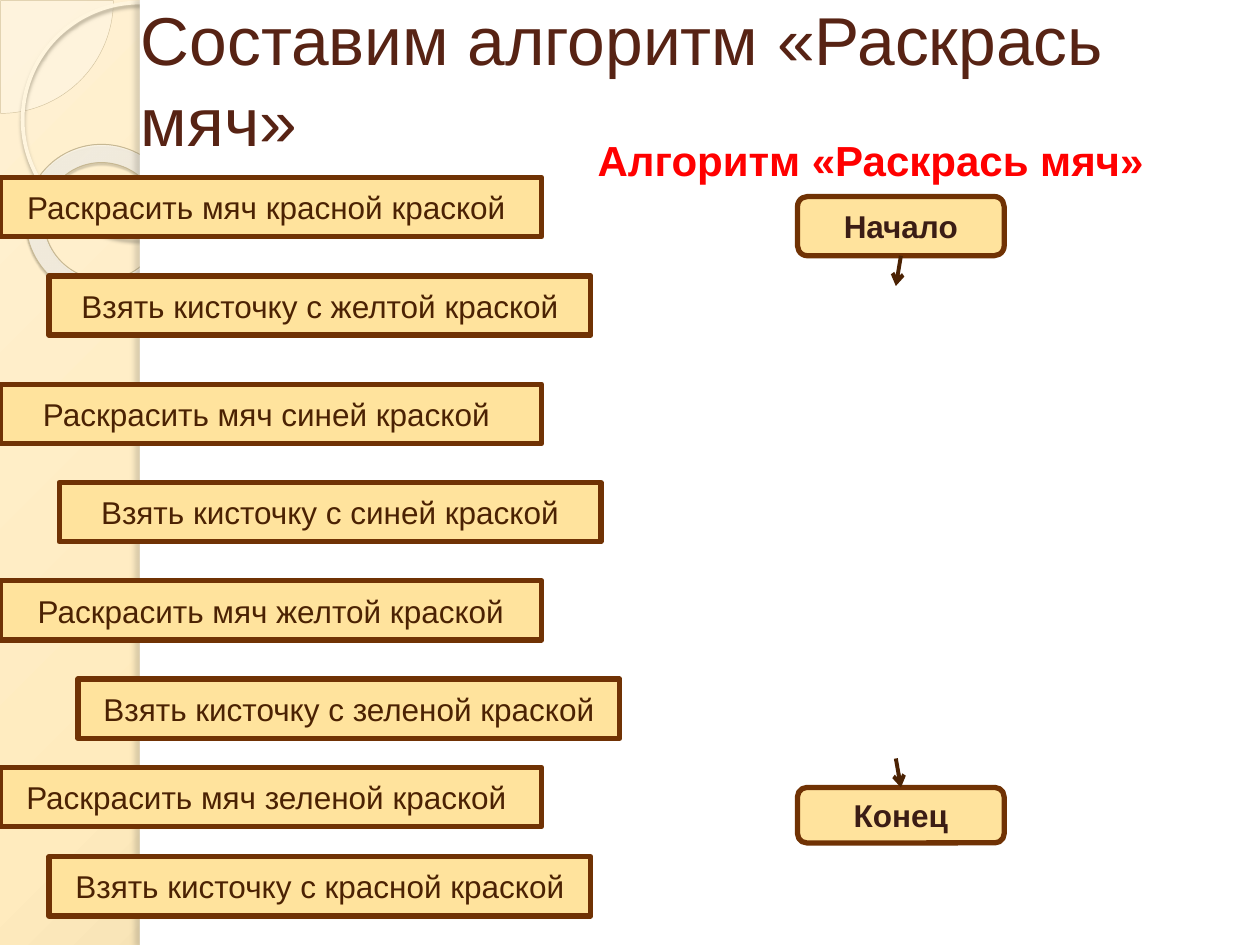
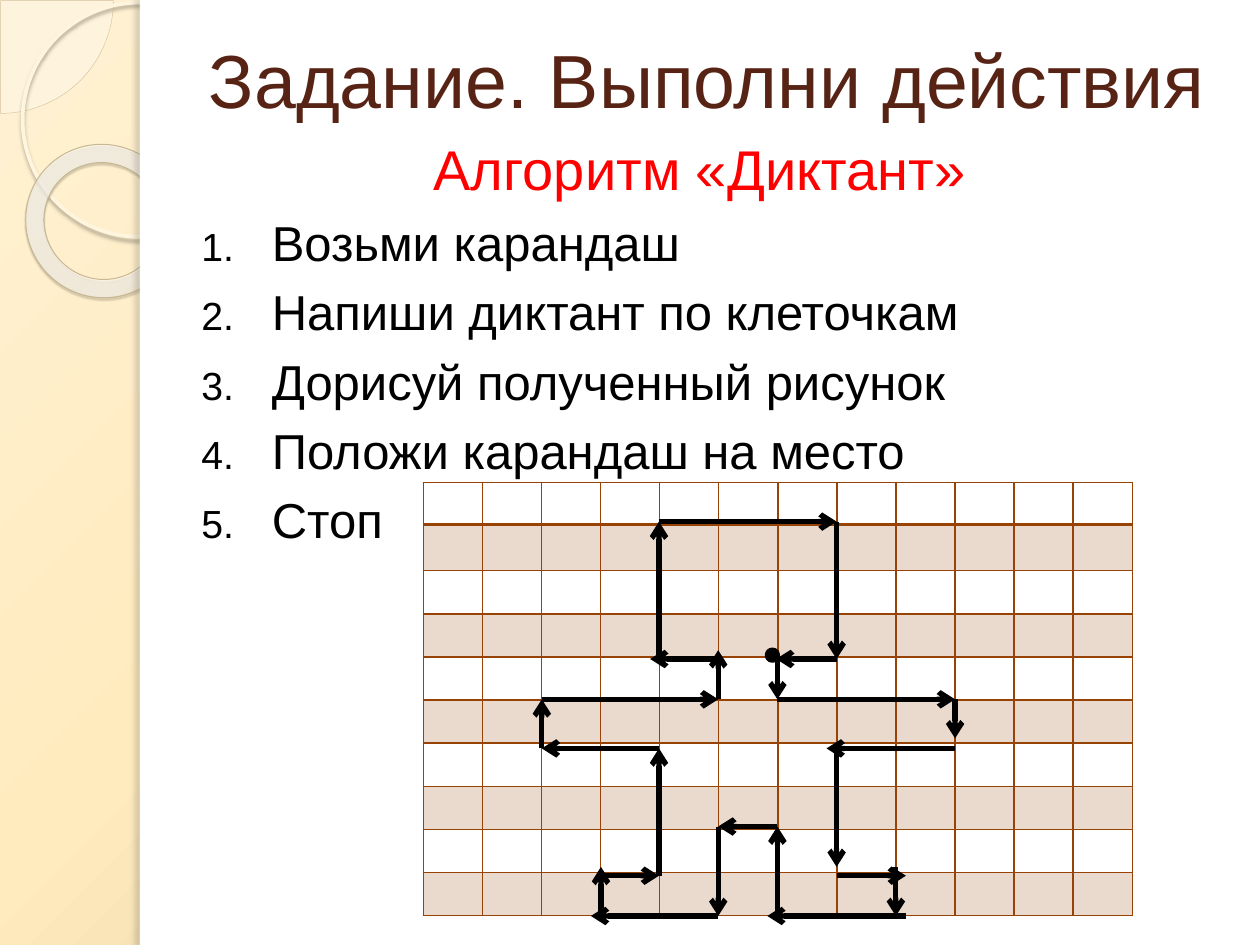
from lxml import etree
from pptx import Presentation
from pptx import util as u
from pptx.dml import color as dml
from pptx.enum import shapes, text
from pptx.oxml import ns

FONT = "Arial"
TITLE_COLOR = "572314"
RED = "FF0000"
BLACK = "000000"
WHITE = "FFFFFF"
BOX_FILL = "FFE39D"
BOX_LINE = "703204"
BROWN = "4B2203"
TERMINAL_TEXT = "3B1D15"
GRID_LINE = "964305"
GRID_BAND = "EAD9CD"

SHAPE = shapes.MSO_SHAPE
CENTER = text.PP_ALIGN.CENTER
MIDDLE = text.MSO_ANCHOR.MIDDLE

STEP_SIZE = (4.3, 0.47)
STEPS = [
    ("Раскрасить мяч красной краской ", 0, 1.41),
    ("Взять кисточку с желтой краской", 0.39, 2.19),
    ("Раскрасить мяч синей краской ", 0, 3.05),
    ("Взять кисточку с синей краской", 0.47, 3.83),
    ("Раскрасить мяч желтой краской", 0, 4.61),
    ("Взять кисточку с зеленой краской", 0.62, 5.39),
    ("Раскрасить мяч зеленой краской ", 0, 6.09),
    ("Взять кисточку с красной краской", 0.39, 6.8),
]

DICTATION = [
    "Возьми карандаш",
    "Напиши диктант по клеточкам",
    "Дорисуй полученный рисунок",
    "Положи карандаш на место",
    "Стоп",
]
GRID_WIDTH, GRID_HEIGHT = 5.63, 3.44
FIRST_ROWS = [0.33, 0.37]
ROW_HEIGHTS = FIRST_ROWS + [(GRID_HEIGHT - sum(FIRST_ROWS)) / 8] * 8
COLUMN_COUNT = 12

# Pencil moves in drawing order, from the dot: x and y of start, x and y of end
MOVES = [
    (6.17, 5.22, 6.17, 5.55), (6.17, 5.55, 7.58, 5.55),
    (7.58, 5.55, 7.58, 5.86), (7.58, 5.94, 6.56, 5.94),
    (6.64, 5.94, 6.64, 6.88), (6.64, 6.95, 7.19, 6.95),
    (7.11, 6.88, 7.11, 7.27), (7.19, 7.27, 6.09, 7.27),
    (6.17, 7.27, 6.17, 6.56), (6.17, 6.56, 5.7, 6.56),
    (5.7, 6.56, 5.7, 7.27), (5.7, 7.27, 4.69, 7.27),
    (4.77, 7.27, 4.77, 6.88), (4.77, 6.95, 5.23, 6.95),
    (5.23, 6.95, 5.23, 5.94), (5.23, 5.94, 4.3, 5.94),
    (4.3, 5.94, 4.3, 5.55), (4.3, 5.55, 5.7, 5.55),
    (5.7, 5.55, 5.7, 5.16), (5.7, 5.23, 5.16, 5.23),
    (5.23, 5.23, 5.23, 4.14), (5.23, 4.14, 6.64, 4.14),
    (6.64, 4.14, 6.64, 5.23), (6.64, 5.23, 6.16, 5.23),
]


def rgb(hex_color):
    return dml.RGBColor.from_string(hex_color)


def add_xml(parent, tag, **attributes):
    values = {name: str(value) for name, value in attributes.items()}
    return etree.SubElement(parent, ns.qn(f"a:{tag}"), values)


def add_xml_color(parent, hex_color, opacity=100):
    color = add_xml(parent, "srgbClr", val=hex_color)
    if opacity < 100:
        add_xml(color, "alpha", val=opacity * 1000)


def set_circle_gradient(owner, stops, left, top):
    """Rewrite the gradient in owner; stops are (percent, colour, opacity)."""
    gradient = owner.find(".//" + ns.qn("a:gradFill"))
    for child in list(gradient):
        gradient.remove(child)
    stop_list = add_xml(gradient, "gsLst")
    for position, hex_color, opacity in stops:
        stop = add_xml(stop_list, "gs", pos=position * 1000)
        add_xml_color(stop, hex_color, opacity)
    circle = add_xml(gradient, "path", path="circle")
    add_xml(circle, "fillToRect", l=left * 1000, t=top * 1000,
            r=(100 - left) * 1000, b=(100 - top) * 1000)


def add_shadow(shape, hex_color, opacity, blur, distance, angle):
    effects = shape.element.spPr.find(ns.qn("a:effectLst"))
    shadow = add_xml(effects, "outerShdw", blurRad=u.Pt(blur), dist=u.Pt(distance),
                     dir=angle * 60000, algn="tl", rotWithShape=0)
    add_xml_color(shadow, hex_color, opacity)


def add_shape(slide, kind, left, top, width, height, fill=None, line=None, line_width=1):
    shape = slide.shapes.add_shape(
        kind, u.Inches(left), u.Inches(top), u.Inches(width), u.Inches(height))
    shape.shadow.inherit = False
    if fill:
        shape.fill.solid()
        shape.fill.fore_color.rgb = rgb(fill)
    else:
        shape.fill.background()
    if line:
        shape.line.color.rgb = rgb(line)
        shape.line.width = u.Pt(line_width)
    else:
        shape.line.fill.background()
    return shape


def write(paragraph, content, size, hex_color, bold=False, align=None):
    paragraph.text = content
    paragraph.alignment = align
    for run in paragraph.runs:
        run.font.name = FONT
        run.font.size = u.Pt(size)
        run.font.bold = bold
        run.font.color.rgb = rgb(hex_color)


def add_text_frame(slide, left, top, width, height):
    box = slide.shapes.add_textbox(
        u.Inches(left), u.Inches(top), u.Inches(width), u.Inches(height))
    box.text_frame.word_wrap = True
    return box.text_frame


def add_title(slide, content, left, width, size):
    frame = add_text_frame(slide, left, 0, width, 1.25)
    frame.vertical_anchor = MIDDLE
    write(frame.paragraphs[0], content, size, TITLE_COLOR)


def add_label_box(slide, kind, content, left, top, width, height, hex_color, bold=False):
    box = add_shape(slide, kind, left, top, width, height, BOX_FILL, BOX_LINE, 3)
    box.text_frame.word_wrap = True
    box.text_frame.vertical_anchor = MIDDLE
    write(box.text_frame.paragraphs[0], content, 18, hex_color, bold, CENTER)


def add_arrow(slide, start_x, start_y, end_x, end_y, hex_color, width):
    arrow = slide.shapes.add_connector(
        shapes.MSO_CONNECTOR.STRAIGHT, u.Inches(start_x), u.Inches(start_y),
        u.Inches(end_x), u.Inches(end_y))
    arrow.line.color.rgb = rgb(hex_color)
    arrow.line.width = u.Pt(width)
    properties = arrow.element.spPr
    add_xml(properties.find(ns.qn("a:ln")), "tailEnd", type="arrow")
    add_xml(properties, "effectLst")


def add_side_band(slide):
    """Gradient background, circles at the left and the white panel over them."""
    slide.background.fill.gradient()
    set_circle_gradient(
        slide.element,
        [(0, "FFF1D3", 100), (40, "FFEBBE", 100), (100, "C9B484", 100)], -24, -20)

    quarter = add_shape(slide, SHAPE.PIE, -0.89, -0.89, 1.79, 1.79, "FEFAF4", "D3C39F", 0.25)
    quarter.adjustments[0] = 0
    quarter.adjustments[1] = 54
    quarter_color = quarter.element.spPr.find(ns.qn("a:solidFill"))[0]
    add_xml(quarter_color, "alpha", val=33000)

    circle = add_shape(slide, SHAPE.OVAL, 0.18, 0.02, 1.86, 1.86, None, "FFF5DE", 2.15)
    add_shadow(circle, "B0A68F", 85, 2, 2, 90)

    ring = add_shape(slide, SHAPE.DONUT, 0.2, 1.15, 1.23, 1.21, None, "C7B893", 0.58)
    ring.rotation = 38.6
    ring.adjustments[0] = 0.12
    ring.fill.gradient()
    set_circle_gradient(
        ring.element,
        [(0, "FFFCF6", 70), (70, "FFFEFB", 55), (100, "F0D28E", 60)], -408, -50)
    add_shadow(ring, "5A5444", 35, 1, 1.2, 75)

    add_shape(slide, SHAPE.RECTANGLE, 1.11, 0, 8.89, 7.5, WHITE)
    edge = add_shape(slide, SHAPE.RECTANGLE, 1.11, 0, 0.08, 7.5, WHITE)
    add_shadow(edge, "736F63", 25, 3, 3, 180)


def add_slide(presentation):
    slide = presentation.slides.add_slide(presentation.slide_layouts[6])
    add_side_band(slide)
    return slide


def set_indent(paragraph, margin, first_line):
    properties = paragraph._p.get_or_add_pPr()
    properties.set("marL", str(u.Inches(margin)))
    properties.set("indent", str(u.Inches(first_line)))
    return properties


def add_numbered_list(slide, heading, items):
    frame = add_text_frame(slide, 1.41, 1.02, 8.2, 5.25)
    first = frame.paragraphs[0]
    write(first, heading, 32, RED, align=CENTER)
    first.space_before = u.Pt(6)
    set_indent(first, 0.4, -0.31)
    for item in items:
        paragraph = frame.add_paragraph()
        write(paragraph, item, 28, BLACK)
        paragraph.space_before = u.Pt(6)
        properties = set_indent(paragraph, 0.65, -0.56)
        add_xml_color(add_xml(properties, "buClr"), BLACK)
        add_xml(properties, "buSzPct", val=80000)
        add_xml(properties, "buFont", typeface=FONT)
        add_xml(properties, "buAutoNum", type="arabicPeriod")


def set_cell_borders(cell, bottom_width):
    """Borders must precede the fill among the cell properties."""
    properties = cell._tc.get_or_add_tcPr()
    for side, width in (("lnL", 1), ("lnR", 1), ("lnT", 1), ("lnB", bottom_width)):
        border = add_xml(properties, side, w=u.Pt(width))
        add_xml_color(add_xml(border, "solidFill"), GRID_LINE)


def add_squared_paper(slide):
    table = slide.shapes.add_table(
        len(ROW_HEIGHTS), COLUMN_COUNT, u.Inches(3.36), u.Inches(3.83),
        u.Inches(GRID_WIDTH), u.Inches(GRID_HEIGHT)).table
    table.first_row = False
    table.horz_banding = False
    for column in table.columns:
        column.width = u.Inches(GRID_WIDTH / COLUMN_COUNT)
    for index, (row, height) in enumerate(zip(table.rows, ROW_HEIGHTS)):
        row.height = u.Inches(height)
        for cell in row.cells:
            cell.margin_top = cell.margin_bottom = 0
            set_cell_borders(cell, 2 if index == 0 else 1)
            if index % 2:
                cell.fill.solid()
                cell.fill.fore_color.rgb = rgb(GRID_BAND)
            else:
                cell.fill.background()


def build_ball_slide(presentation):
    slide = add_slide(presentation)
    add_title(slide, "Составим алгоритм «Раскрась мяч»", 1.02, 8.98, 38.7)
    heading = add_text_frame(slide, 3.59, 1.02, 6.64, 0.5)
    write(heading.paragraphs[0], "Алгоритм «Раскрась мяч»", 24, RED, True, CENTER)
    for content, top, height in (("Начало", 1.56, 0.47), ("Конец", 6.25, 0.44)):
        add_label_box(slide, SHAPE.ROUNDED_RECTANGLE, content,
                      6.33, top, 1.64, height, TERMINAL_TEXT, True)
    for content, left, top in STEPS:
        add_label_box(slide, SHAPE.RECTANGLE, content, left, top, *STEP_SIZE, BROWN)
    add_arrow(slide, 7.15, 2.03, 7.11, 2.27, BROWN, 2.25)
    add_arrow(slide, 7.11, 6.02, 7.15, 6.25, BROWN, 2.25)


def build_dictation_slide(presentation):
    slide = add_slide(presentation)
    add_title(slide, "Задание. Выполни действия", 1.56, 8.2, 43)
    add_numbered_list(slide, "Алгоритм «Диктант»", DICTATION)
    add_squared_paper(slide)
    add_shape(slide, SHAPE.FLOWCHART_CONNECTOR, 6.09, 5.16, 0.08, 0.08, BLACK, BLACK, 3)
    for move in MOVES:
        add_arrow(slide, *move, BLACK, 3)


def main():
    presentation = Presentation()
    presentation.slide_width = u.Inches(10)
    presentation.slide_height = u.Inches(7.5)
    build_ball_slide(presentation)
    build_dictation_slide(presentation)
    presentation.save("out.pptx")


if __name__ == "__main__":
    main()
